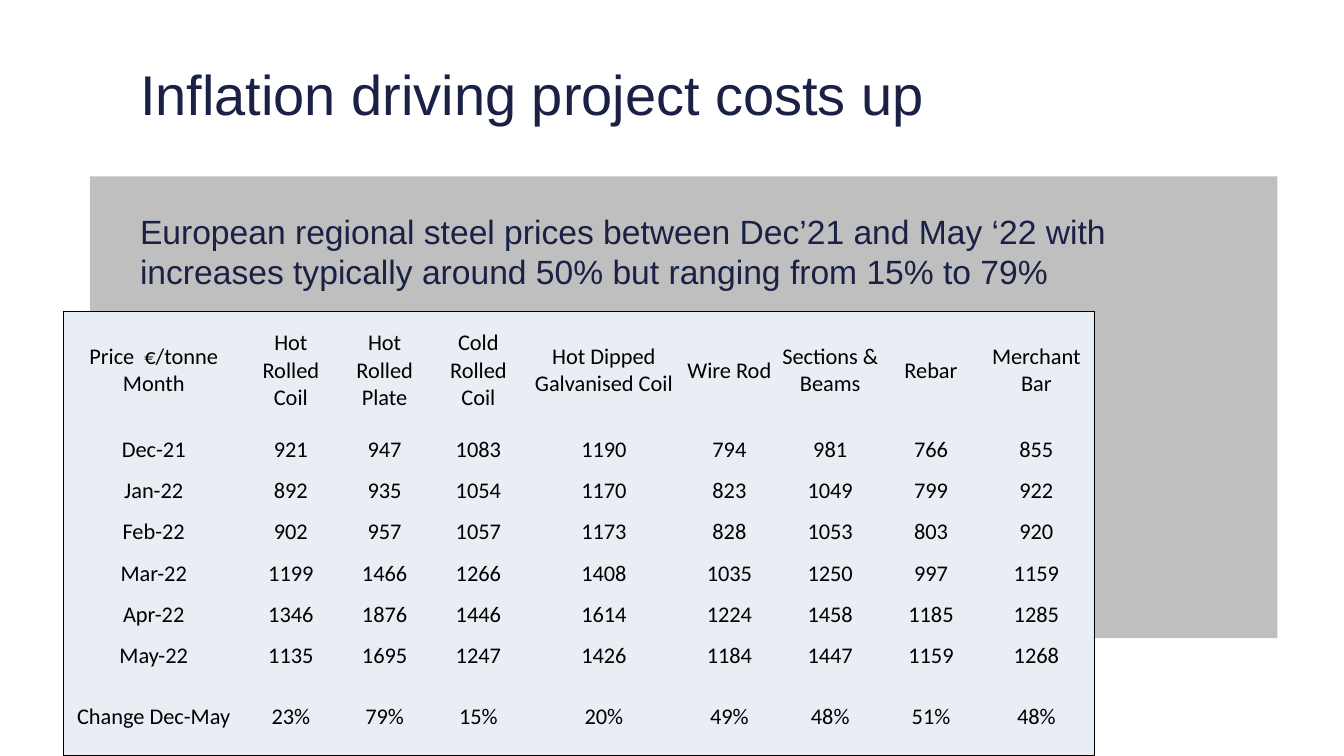
from dataclasses import dataclass

import lxml.etree
import pptx
import pptx.dml.color
import pptx.enum.shapes
import pptx.enum.text
import pptx.oxml.ns
import pptx.slide
import pptx.table
import pptx.text.text
import pptx.util

Inches = pptx.util.Inches
Pt = pptx.util.Pt
RGBColor = pptx.dml.color.RGBColor
Anchor = pptx.enum.text.MSO_ANCHOR


@dataclass(frozen=True)
class Theme:
    navy: str = "1A2145"
    panel: str = "BFBFBF"
    cell: str = "E9EDF4"
    black: str = "000000"
    title_size: int = 40
    body_size: int = 24
    table_size: int = 16
    border_width: int = 1
    heading_font: str = "Arial"
    table_font: str = "Calibri"


@dataclass(frozen=True)
class Box:
    left: float
    top: float
    width: float
    height: float

    def lengths(self) -> list[pptx.util.Length]:
        return [Inches(v) for v in (self.left, self.top, self.width, self.height)]


@dataclass(frozen=True)
class TextBlock:
    box: Box
    text: str
    size: int
    anchor: Anchor


THEME = Theme()
PANEL = Box(0.89, 1.75, 11.78, 4.58)
TEXT_BLOCKS = [
    TextBlock(Box(1.29, 0.3, 11.38, 1.25), "Inflation driving project costs up",
              THEME.title_size, Anchor.MIDDLE),
    TextBlock(Box(1.29, 2.04, 10.72, 3.83),
              "European regional steel prices between Dec’21 and May ‘22 with "
              "increases typically around 50% but ranging from 15% to 79%",
              THEME.body_size, Anchor.TOP),
]

TABLE_BOX = Box(0.63, 3.09, 10.24, 4.41)
COLUMN_WIDTHS = [1.79, 0.93, 0.93, 0.93, 1.56, 0.93, 1.07, 0.93, 1.16]
ROW_HEIGHTS = [1.16] + [0.41] * 6 + [0.79]
STEEL_PRICES = [
    ["Price  €/tonne\nMonth", "Hot Rolled Coil", "Hot Rolled Plate", "Cold Rolled Coil",
     "Hot Dipped Galvanised Coil", "Wire Rod", "Sections & Beams", "Rebar", "Merchant Bar"],
    ["Dec-21", 921, 947, 1083, 1190, 794, 981, 766, 855],
    ["Jan-22", 892, 935, 1054, 1170, 823, 1049, 799, 922],
    ["Feb-22", 902, 957, 1057, 1173, 828, 1053, 803, 920],
    ["Mar-22", 1199, 1466, 1266, 1408, 1035, 1250, 997, 1159],
    ["Apr-22", 1346, 1876, 1446, 1614, 1224, 1458, 1185, 1285],
    ["May-22", 1135, 1695, 1247, 1426, 1184, 1447, 1159, 1268],
    ["Change Dec-May", "23%", "79%", "15%", "20%", "49%", "48%", "51%", "48%"],
]
CELL_FORMAT = {
    "vertical_anchor": Anchor.MIDDLE,
    "margin_left": Inches(0.01),
    "margin_right": Inches(0.01),
    "margin_top": Inches(0.01),
    "margin_bottom": Inches(0),
}


def apply_format(target: object, values: dict) -> None:
    for name, value in values.items():
        setattr(target, name, value)


def write_text(p: pptx.text.text._Paragraph, text: str, font: str, size: int, color: str) -> None:
    p.text = text
    for r in p.runs:
        apply_format(r.font, {"name": font, "size": Pt(size)})
        r.font.color.rgb = RGBColor.from_string(color)


def add_panel(s: pptx.slide.Slide, box: Box) -> None:
    sp = s.shapes.add_shape(pptx.enum.shapes.MSO_SHAPE.RECTANGLE, *box.lengths())
    sp.shadow.inherit = False
    sp.fill.solid()
    sp.fill.fore_color.rgb = RGBColor.from_string(THEME.panel)
    sp.line.fill.background()


def add_text_block(s: pptx.slide.Slide, block: TextBlock) -> None:
    tf = s.shapes.add_textbox(*block.box.lengths()).text_frame
    apply_format(tf, {"word_wrap": True, "vertical_anchor": block.anchor})
    write_text(tf.paragraphs[0], block.text, THEME.heading_font, block.size, THEME.navy)


def set_borders(cell: pptx.table._Cell, sides: dict[str, bool]) -> None:
    """Draw the sides marked True and clear the others; call before filling the cell."""
    qn = pptx.oxml.ns.qn
    props = cell._tc.get_or_add_tcPr()
    for side, drawn in sides.items():
        line = lxml.etree.SubElement(props, qn(f"a:ln{side}"), w=str(Pt(THEME.border_width)))
        if drawn:
            fill = lxml.etree.SubElement(line, qn("a:solidFill"))
            lxml.etree.SubElement(fill, qn("a:srgbClr"), val=THEME.black)
        else:
            lxml.etree.SubElement(line, qn("a:noFill"))


def add_price_table(s: pptx.slide.Slide) -> None:
    last_row, last_col = len(ROW_HEIGHTS) - 1, len(COLUMN_WIDTHS) - 1
    table = s.shapes.add_table(last_row + 1, last_col + 1, *TABLE_BOX.lengths()).table
    apply_format(table, {"first_row": False, "horz_banding": False})
    for column, width in zip(table.columns, COLUMN_WIDTHS):
        column.width = Inches(width)
    for row, height in zip(table.rows, ROW_HEIGHTS):
        row.height = Inches(height)
    for i, values in enumerate(STEEL_PRICES):
        for j, value in enumerate(values):
            cell = table.cell(i, j)
            apply_format(cell, CELL_FORMAT)
            set_borders(cell, {"L": j == 0, "R": j == last_col, "T": i == 0, "B": i == last_row})
            cell.fill.solid()
            cell.fill.fore_color.rgb = RGBColor.from_string(THEME.cell)
            p = cell.text_frame.paragraphs[0]
            p.alignment = pptx.enum.text.PP_ALIGN.CENTER
            write_text(p, str(value), THEME.table_font, THEME.table_size, THEME.black)


def main() -> None:
    prs = pptx.Presentation()
    apply_format(prs, {"slide_width": Inches(13.33), "slide_height": Inches(7.5)})
    s = prs.slides.add_slide(prs.slide_layouts[6])
    add_panel(s, PANEL)
    for block in TEXT_BLOCKS:
        add_text_block(s, block)
    add_price_table(s)
    prs.save("out.pptx")


if __name__ == "__main__":
    main()
